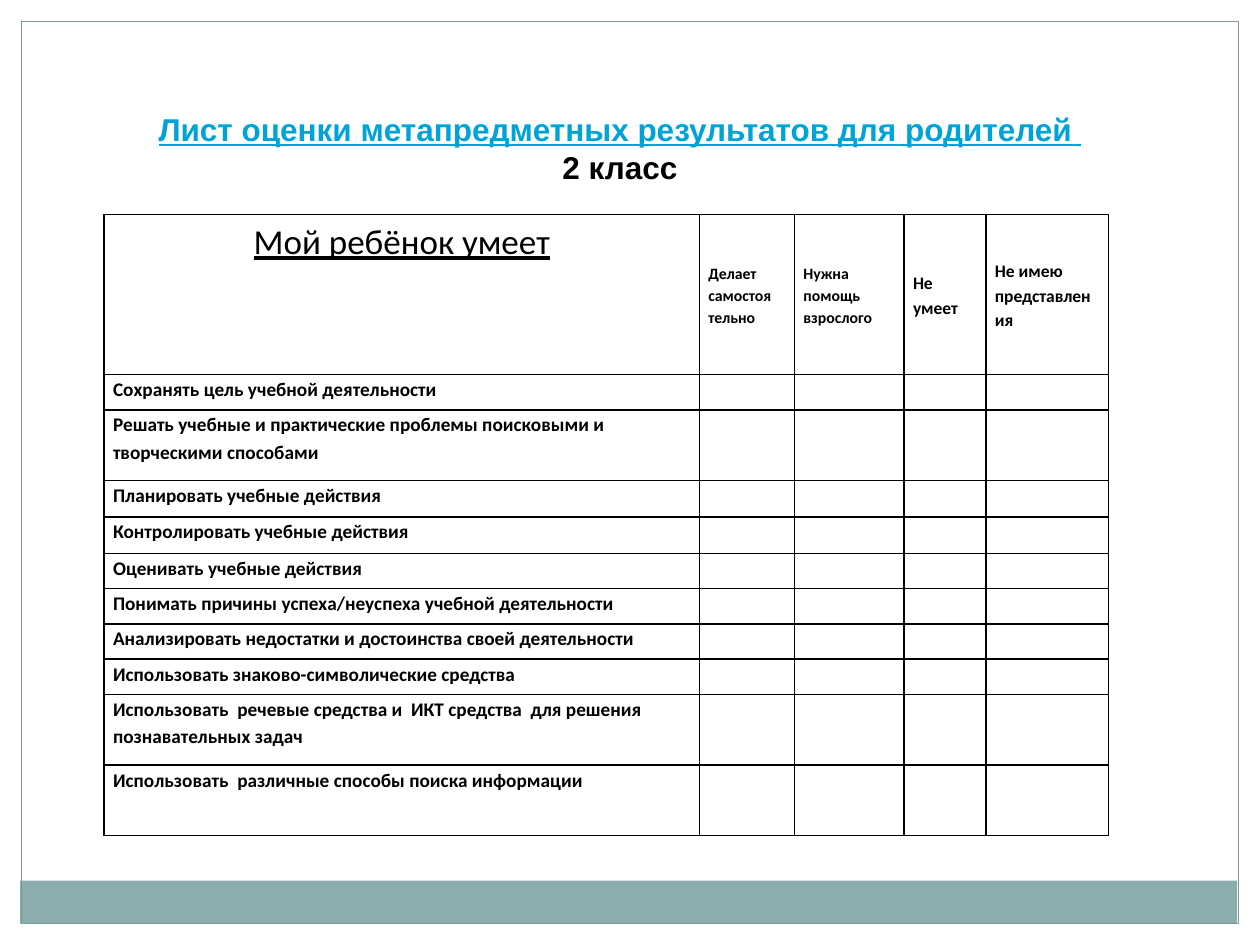
from lxml import etree
from pptx import Presentation
from pptx import util as u
from pptx.dml.color import RGBColor
from pptx.enum import shapes, text
from pptx.oxml.ns import qn

COLS, ROWS = 100, 75
WIDE, HIGH = u.Inches(10), u.Inches(7.5)
EDGE = 1.7
HEADS = [
    ("Мой ребёнок умеет", 20),
    ("Делает самостоя\nтельно", 9),
    ("Нужна помощь взрослого", 9),
    ("Не\nумеет", 10),
    ("Не имею представления", 10),
]
SKILLS = [
    "Сохранять цель учебной деятельности",
    "Решать учебные и практические проблемы поисковыми и творческими способами",
    "Планировать учебные действия",
    "Контролировать учебные действия",
    "Оценивать учебные действия",
    "Понимать причины успеха/неуспеха учебной деятельности",
    "Анализировать недостатки и достоинства своей деятельности",
    "Использовать знаково-символические средства",
    "Использовать  речевые средства и  ИКТ средства  для решения познавательных задач",
    "Использовать  различные способы поиска информации",
]
WIDTHS = [47.25, 7.55, 8.7, 6.5, 9.7]
HEIGHTS = [12.7, 2.8, 5.6, 2.9, 2.9, 2.8, 2.8, 2.8, 2.8, 5.6, 5.6]


def tint(code):
    return RGBColor.from_string(code)


class Sheet:
    ink, sky, sage, edge, white = "000000", "00A3D6", "8CADAE", "7C999A", "FFFFFF"
    head, body = "Arial", "Calibri"

    def __init__(self, deck):
        self.slide = deck.slides.add_slide(deck.slide_layouts[5])

    def across(self, n):
        return round(WIDE * n / COLS)

    def down(self, n):
        return round(HIGH * n / ROWS)

    def area(self, x, y, w, h):
        return self.across(x), self.down(y), self.across(w), self.down(h)

    def font(self, par, size, face, color, bold=True, line=False):
        for run in par.runs:
            font = run.font
            font.size, font.name = u.Pt(size), face
            font.bold, font.underline = bold, line
            font.color.rgb = tint(color)

    def box(self, area, fill=None, line=None):
        shape = self.slide.shapes.add_shape(
            shapes.MSO_SHAPE.RECTANGLE, *self.area(*area))
        shape.shadow.inherit = False
        if fill:
            shape.fill.solid()
            shape.fill.fore_color.rgb = tint(fill)
        else:
            shape.fill.background()
        if line:
            shape.line.color.rgb = tint(line)
            shape.line.width = u.Pt(0.75)
        else:
            shape.line.fill.background()

    def frame(self):
        for area in ((0, 0, COLS, EDGE), (COLS - EDGE, 0, EDGE, ROWS),
                     (0, 0, EDGE, ROWS)):
            self.box(area, fill=self.white)
        self.box((1.6, 69.9, 96.6, 3.4), fill=self.sage)
        self.box((EDGE, EDGE, COLS - 2 * EDGE, ROWS - 2 * EDGE), line=self.edge)

    def title(self, area, words):
        shape = self.slide.shapes.title
        shape.left, shape.top, shape.width, shape.height = self.area(*area)
        frame = shape.text_frame
        frame.text = words
        frame.word_wrap = True
        frame.auto_size = text.MSO_AUTO_SIZE.NONE
        frame.vertical_anchor = text.MSO_ANCHOR.MIDDLE
        for row, par in enumerate(frame.paragraphs):
            par.alignment = text.PP_ALIGN.CENTER
            self.font(par, 18, self.head, self.ink if row else self.sky,
                      line=not row)

    def border(self, cell):
        props = cell._tc.get_or_add_tcPr()
        for spot, side in enumerate(("lnL", "lnR", "lnT", "lnB")):
            line = etree.Element(qn("a:" + side), w=str(u.Pt(1)))
            fill = etree.SubElement(line, qn("a:solidFill"))
            etree.SubElement(fill, qn("a:srgbClr"), val=self.ink)
            props.insert(spot, line)

    def cell(self, cell, words, size, top=False):
        cell.margin_left = cell.margin_right = u.Inches(0.07)
        cell.margin_top = cell.margin_bottom = 0
        cell.fill.background()
        self.border(cell)
        cell.text_frame.text = words
        for par in cell.text_frame.paragraphs:
            par.line_spacing = 1.15
            self.font(par, size, self.body, self.ink, not top, top)
            if not words:
                etree.SubElement(par._p, qn("a:endParaRPr"), sz=str(size * 100))

    def table(self, x, y):
        area = self.area(x, y, sum(WIDTHS), sum(HEIGHTS))
        grid = self.slide.shapes.add_table(
            len(HEIGHTS), len(WIDTHS), *area).table
        grid.first_row = grid.horz_banding = False
        for col, wide in zip(grid.columns, WIDTHS):
            col.width = self.across(wide)
        for row, high in zip(grid.rows, HEIGHTS):
            row.height = self.down(high)
        for col, (words, size) in enumerate(HEADS):
            cell = grid.cell(0, col)
            self.cell(cell, words, size, top=not col)
            if col:
                cell.vertical_anchor = text.MSO_ANCHOR.MIDDLE
            else:
                cell.text_frame.paragraphs[0].alignment = text.PP_ALIGN.CENTER
        for row, skill in enumerate(SKILLS, 1):
            for col in range(len(WIDTHS)):
                self.cell(grid.cell(row, col), "" if col else skill, 11)


def main():
    deck = Presentation()
    deck.slide_width, deck.slide_height = WIDE, HIGH
    sheet = Sheet(deck)
    sheet.frame()
    sheet.table(8.27, 17.03)
    sheet.title((8.25, 8.2, 81.9, 7.1),
                "Лист оценки метапредметных результатов для родителей \n2 класс")
    deck.save("out.pptx")


if __name__ == "__main__":
    main()
